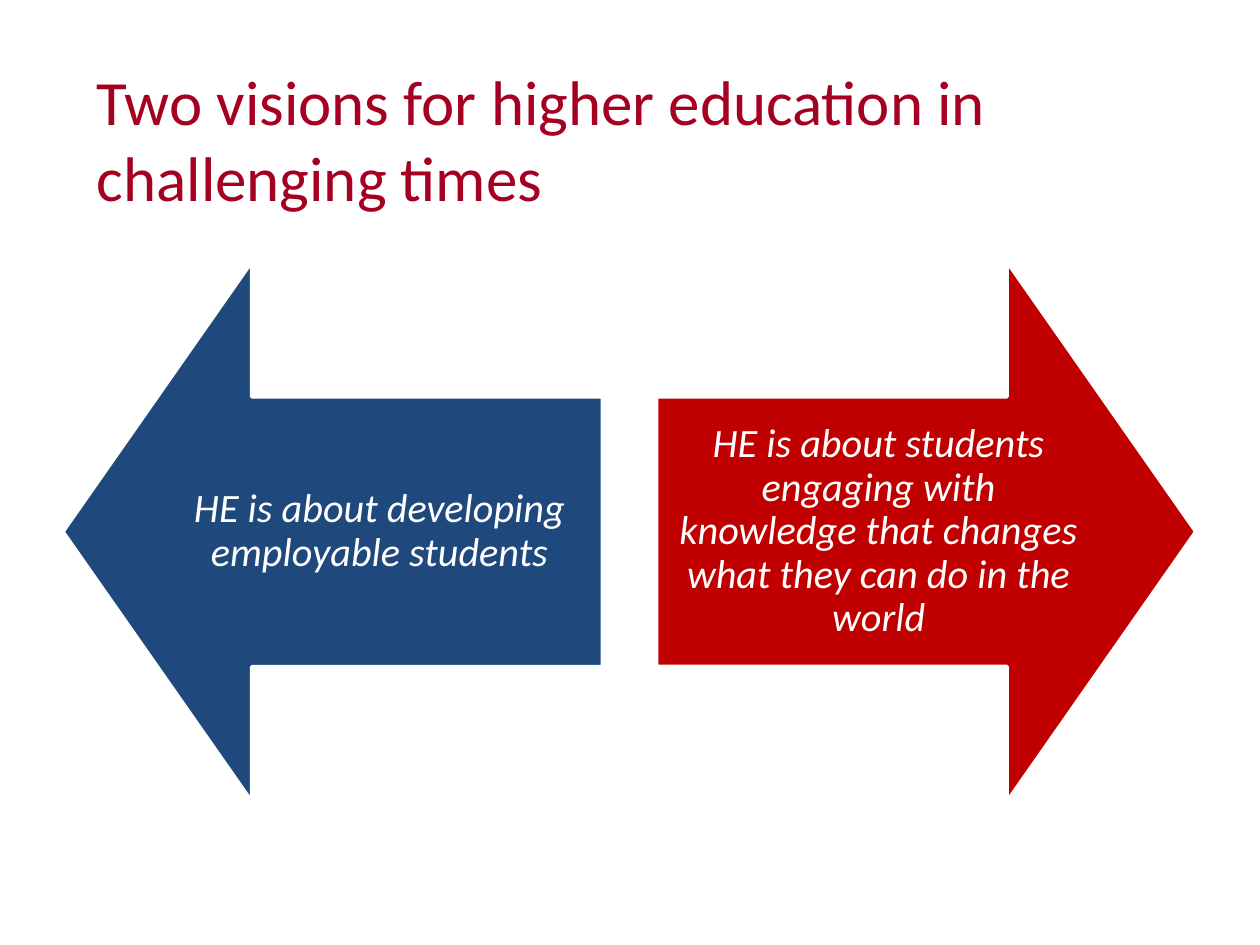
from pptx import Presentation, util as u
from pptx.dml.color import RGBColor
from pptx.enum import shapes, text

WIDE, HIGH = 10, 7.5


def paint(hue):
    return RGBColor.from_string(hue)


class Deck:
    font = "Calibri"
    white = "FFFFFF"
    title = "A50021"

    def __init__(self):
        self.prs = Presentation()
        self.prs.slide_width = u.Inches(WIDE)
        self.prs.slide_height = u.Inches(HIGH)
        self.slide = self.prs.slides.add_slide(self.prs.slide_layouts[6])

    def place(self, *box):
        """Turn shares of the slide (left, top, width, height) into lengths."""
        sides = (WIDE, HIGH, WIDE, HIGH)
        return [u.Inches(part * side) for part, side in zip(box, sides)]

    def label(self, words, box, size, hue, pad=None, italic=False):
        frame = self.slide.shapes.add_textbox(*self.place(*box)).text_frame
        frame.word_wrap = True
        frame.vertical_anchor = text.MSO_ANCHOR.MIDDLE
        if pad is not None:
            frame.margin_left = frame.margin_right = u.Inches(pad)
            frame.margin_top = frame.margin_bottom = u.Inches(pad)
        para = frame.paragraphs[0]
        run = para.add_run()
        run.text = words
        run.font.name = self.font
        run.font.size = u.Pt(size)
        run.font.italic = italic
        run.font.color.rgb = paint(hue)
        return para

    def arrow(self, box, turn, hue):
        shape = self.slide.shapes.add_shape(
            shapes.MSO_SHAPE.UP_ARROW, *self.place(*box))
        shape.rotation = turn
        shape.adjustments[0] = 0.5
        shape.adjustments[1] = 0.35
        shape.shadow.inherit = False
        shape.fill.solid()
        shape.fill.fore_color.rgb = paint(hue)
        shape.line.color.rgb = paint(self.white)
        shape.line.width = u.Pt(2)

    def vision(self, words, left, turn, hue, inset):
        """Draw a square arrow with its words over the shaft."""
        side, top = 4.28, 2.08
        self.arrow((left / WIDE, top / HIGH, side / WIDE, side / HIGH), turn, hue)
        box = ((left + inset) / WIDE, (top + side / 4) / HIGH,
               3.53 / WIDE, side / 2 / HIGH)
        para = self.label(words, box, 23, self.white, pad=0.18, italic=True)
        para.alignment = text.PP_ALIGN.CENTER
        para.line_spacing = 0.9


def main():
    deck = Deck()
    deck.vision("HE is about developing employable students",
                0.5, 270, "1F497D", 0.75)
    deck.vision("HE is about students engaging with knowledge that changes "
                "what they can do in the world", 5.21, 90, "C00000", 0)
    deck.label("Two visions for higher education in challenging times",
               (0.067, 0.063, 0.899, 0.167), 36, deck.title)
    deck.prs.save("out.pptx")


if __name__ == "__main__":
    main()
